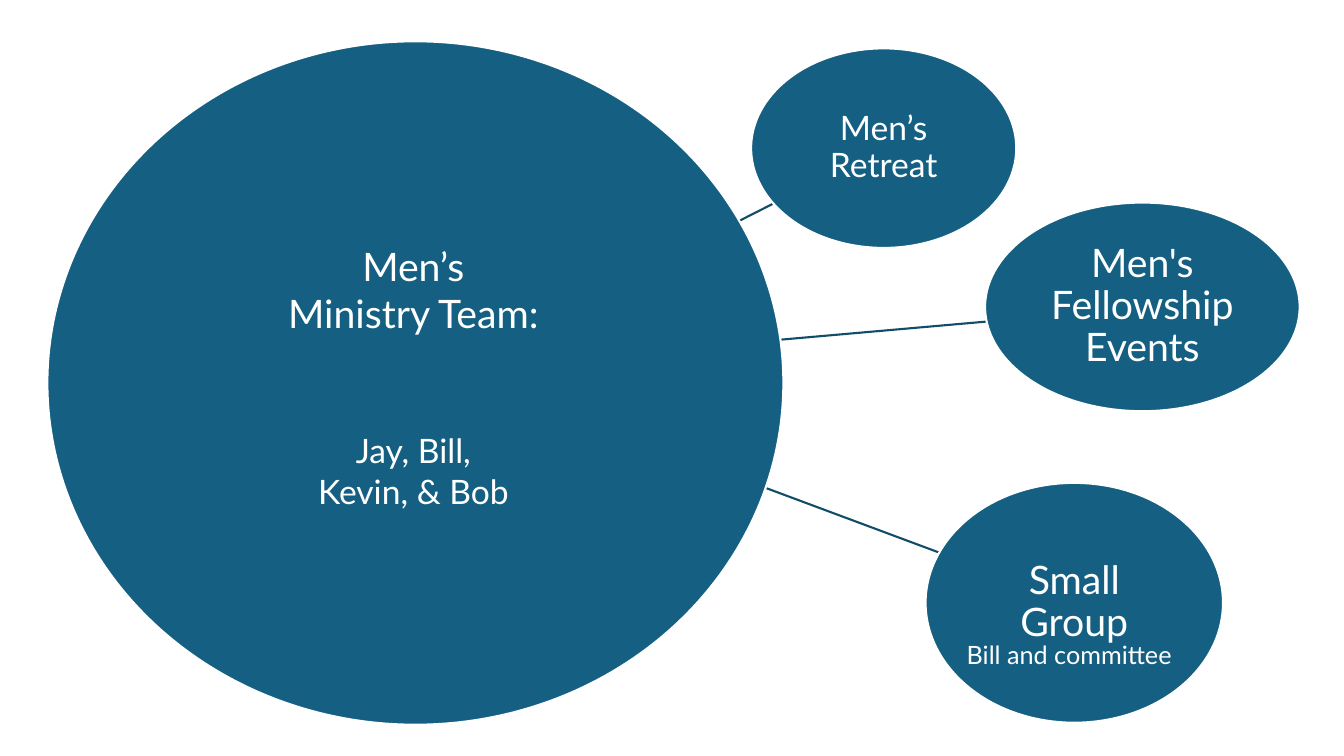
from pptx import Presentation
from pptx.dml.color import RGBColor
from pptx.enum import shapes, text
from pptx.oxml.ns import qn
from pptx.util import Inches, Pt
from lxml import etree

FONT, WHITE, TEAL, DARK_TEAL = "Lato", "FFFFFF", "156082", "114D68"
HUB = (0.47, 0.41, 7.3, 6.78)
TEAM_LINES = [("Men’s", 28, 0), ("Ministry Team:", 28, 0),
              ("Jay, Bill,", 24, 67.2), ("Kevin, & Bob", 24, 0)]
ACTIVITIES = [
    ("Small Group", 28, (9.18, 4.79, 2.95, 2.38), (5.58, 4.09, 9.31, 5.48)),
    ("Men's Fellowship Events", 28, (9.77, 2.01, 3.12, 2.07), (5.58, 3.56, 9.79, 3.19)),
    ("Men’s Retreat", 24, (7.45, 0.48, 2.63, 1.98), (5.58, 3.08, 7.67, 2.02)),
]


def color(value):
    """Return the colour for a hex string."""
    return RGBColor.from_string(value)


def lengths(values):
    """Convert numbers to lengths in inches."""
    return [Inches(value) for value in values]


def write(paragraph, words, size, **formats):
    """Put formatted words in a paragraph."""
    run = paragraph.add_run()
    run.text = words
    run.font.name, run.font.size = FONT, Pt(size)
    run.font.color.rgb = color(WHITE)
    for name, value in formats.items():
        setattr(paragraph, name, value)


def add_spoke(slide, ends):
    """Draw a line from the hub to an activity."""
    spoke = slide.shapes.add_connector(shapes.MSO_CONNECTOR.STRAIGHT, *lengths(ends))
    spoke.line.color.rgb = color(DARK_TEAL)
    spoke.line.width = Pt(1.5)
    etree.SubElement(spoke._element.spPr, qn("a:effectLst"))


def add_ellipse(slide, box):
    """Draw a teal ellipse with a white outline."""
    ellipse = slide.shapes.add_shape(shapes.MSO_SHAPE.OVAL, *lengths(box))
    ellipse.shadow.inherit = False
    ellipse.fill.solid()
    ellipse.fill.fore_color.rgb = color(TEAL)
    ellipse.line.color.rgb = color(WHITE)
    ellipse.line.width = Pt(1.5)
    return ellipse


def add_activity(slide, label, size, box):
    """Draw an ellipse with its label in the middle."""
    frame = add_ellipse(slide, box).text_frame
    formats = {"word_wrap": True, "vertical_anchor": text.MSO_ANCHOR.MIDDLE}
    formats.update({f"margin_{side}": Inches(0.05)
                    for side in ("left", "top", "right", "bottom")})
    for name, value in formats.items():
        setattr(frame, name, value)
    write(frame.paragraphs[0], label, size, alignment=text.PP_ALIGN.CENTER, line_spacing=0.9)


def add_hub(slide, box):
    """Draw the large ellipse and the names of the team."""
    add_ellipse(slide, box)
    left, top, width, height = box
    team = slide.shapes.add_textbox(*lengths((left + 1.06, top + 1.94, 5.14, 2.79)))
    frame = team.text_frame
    frame.word_wrap = True
    for index, (words, size, gap) in enumerate(TEAM_LINES):
        paragraph = frame.add_paragraph() if index else frame.paragraphs[0]
        write(paragraph, words, size, alignment=text.PP_ALIGN.CENTER, space_before=Pt(gap))


def add_leaders(slide, box):
    """Write who leads the small group."""
    frame = slide.shapes.add_textbox(*lengths(box)).text_frame
    frame.word_wrap = False
    write(frame.paragraphs[0], "Bill and committee", 18, alignment=text.PP_ALIGN.LEFT)


def main():
    """Build the ministry diagram and save it."""
    presentation = Presentation()
    presentation.slide_width, presentation.slide_height = lengths((13.33, 7.5))
    slide = presentation.slides.add_slide(presentation.slide_layouts[6])
    for label, size, box, ends in ACTIVITIES:
        add_spoke(slide, ends)
    add_hub(slide, HUB)
    for label, size, box, ends in reversed(ACTIVITIES):
        add_activity(slide, label, size, box)
    add_leaders(slide, (9.49, 6.29, 2.26, 0.4))
    presentation.save("out.pptx")


if __name__ == "__main__":
    main()
